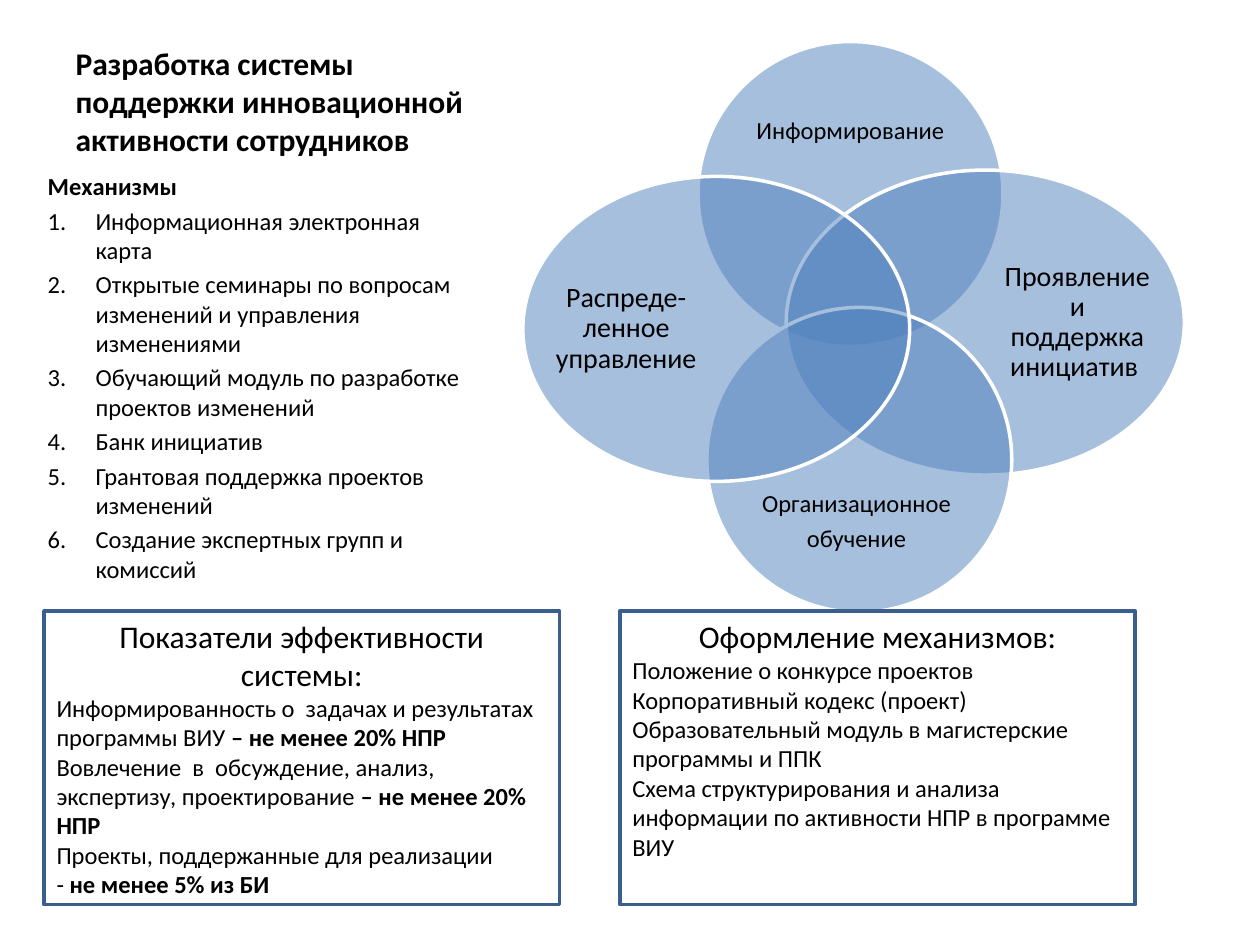
"""Builds a slide on supporting staff innovation: a four-oval Venn diagram, a list and two panels."""
import lxml.etree
import pptx
import pptx.dml.color
import pptx.enum.shapes
import pptx.enum.text
import pptx.oxml.ns
import pptx.util

COLOURS = {"text": "000000", "oval": "4F81BD", "white": "FFFFFF", "border": "3A5F8C"}
FONT = "Calibri"
Pt = pptx.util.Pt
qn = pptx.oxml.ns.qn
Shape = pptx.enum.shapes.MSO_SHAPE
Align = pptx.enum.text.PP_ALIGN
Anchor = pptx.enum.text.MSO_ANCHOR

deck = pptx.Presentation()
deck.slide_width = pptx.util.Inches(10)
deck.slide_height = pptx.util.Inches(7.5)
page = deck.slides.add_slide(deck.slide_layouts[5])


def share(left, top, width, height):
    """Turn percentages of the slide into a position and size."""
    across, down = deck.slide_width / 100, deck.slide_height / 100
    return [round(value) for value in (left * across, top * down, width * across, height * down)]


def write(frame, paragraphs, frame_format):
    """Fill a frame with (spans, size, paragraph format); a span is (words, bold)."""
    frame_format = {"word_wrap": True, "auto_size": pptx.enum.text.MSO_AUTO_SIZE.NONE, **frame_format}
    for name, value in frame_format.items():
        setattr(frame, name, value)
    for index, (spans, size, para_format) in enumerate(paragraphs):
        para = frame.add_paragraph() if index else frame.paragraphs[0]
        for name, value in para_format.items():
            setattr(para, name, value)
        for words, bold in spans:
            span = para.add_run()
            span.text = words
            for name, value in {"name": FONT, "size": Pt(size), "bold": bold}.items():
                setattr(span.font, name, value)
            span.font.color.rgb = pptx.dml.color.RGBColor.from_string(COLOURS["text"])


title = page.shapes.title
for name, value in zip(("left", "top", "width", "height"), share(5, 4, 32.9, 16.93)):
    setattr(title, name, value)
write(title.text_frame,
      [([("Разработка системы поддержки инновационной активности сотрудников", True)],
        18, {"alignment": Align.LEFT})],
      {"vertical_anchor": Anchor.TOP})

ovals = [
    ((55.4, 4.4, 24.2, 32.27), (58.2, 8.8, 18.6, 10.27), 14, ["Информирование"]),
    ((62.4, 18, 31.6, 32.27), (79.4, 21.73, 12.2, 24.8), 16, ["Проявление и поддержка инициатив "]),
    ((56.1, 32.53, 24.2, 32.27), (58.9, 50.13, 18.6, 10.27), 14, ["Организационное ", "обучение "]),
    ((41.5, 18.67, 30.7, 32.27), (43.8, 22.4, 11.8, 24.8), 16, ["Распреде-ленное управление"]),
]
for oval_place, label_place, size, lines in ovals:
    oval = page.shapes.add_shape(Shape.OVAL, *share(*oval_place))
    oval.shadow.inherit = False
    oval.fill.solid()
    oval.fill.fore_color.rgb = pptx.dml.color.RGBColor.from_string(COLOURS["oval"])
    colour = oval.fill._xPr.find(qn("a:solidFill"))[0]
    lxml.etree.SubElement(colour, qn("a:alpha"), val="50000")
    oval.line.color.rgb = pptx.dml.color.RGBColor.from_string(COLOURS["white"])
    oval.line.width = Pt(2)
    label = page.shapes.add_textbox(*share(*label_place))
    label_format = {"alignment": Align.CENTER, "line_spacing": 0.9, "space_after": Pt(size * 0.35)}
    write(label.text_frame,
          [([(line, False)], size, label_format) for line in lines],
          {"vertical_anchor": Anchor.MIDDLE, "margin_left": 0, "margin_right": 0,
           "margin_top": 0, "margin_bottom": 0})

mechanisms = [
    "Информационная электронная карта",
    "Открытые семинары по вопросам изменений и управления изменениями",
    "Обучающий модуль по разработке проектов изменений",
    "Банк инициатив",
    "Грантовая поддержка проектов изменений",
    "Создание экспертных групп и комиссий",
]
list_format = {"space_before": Pt(2.8)}
list_box = page.shapes.add_textbox(*share(2.8, 17.47, 35.1, 46.13))
write(list_box.text_frame,
      [([("Механизмы", True)], 14, list_format)]
      + [([(item, False)], 14, list_format) for item in mechanisms],
      {"vertical_anchor": Anchor.TOP})
indent = pptx.util.Inches(0.38)
for para in list_box.text_frame.paragraphs[1:]:
    properties = para._p.get_or_add_pPr()
    properties.set("marL", str(indent))
    properties.set("indent", str(-indent))
    lxml.etree.SubElement(properties, qn("a:buFont"), typeface="+mj-lt")
    lxml.etree.SubElement(properties, qn("a:buAutoNum"), type="arabicPeriod")

panels = [
    (3.5, Anchor.MIDDLE, "Показатели эффективности системы:", [
        [("Информированность о  задачах и результатах программы ВИУ ", False),
         ("– не менее 20% НПР", True)],
        [("Вовлечение  в  обсуждение, анализ,  экспертизу, проектирование ", False),
         ("– не менее 20% НПР", True)],
        [("Проекты, поддержанные для реализации", False)],
        [("- ", False), ("не менее 5% из БИ", True)],
    ]),
    (49.2, Anchor.TOP, "Оформление механизмов:", [
        [("Положение о конкурсе проектов", False)],
        [("Корпоративный кодекс (проект)", False)],
        [("Образовательный модуль в магистерские программы и ППК", False)],
        [("Схема структурирования и анализа информации по активности НПР в программе ВИУ", False)],
    ]),
]
for left, anchor, heading, entries in panels:
    panel = page.shapes.add_shape(Shape.RECTANGLE, *share(left, 64.67, 40.9, 31.07))
    panel.shadow.inherit = False
    panel.fill.solid()
    panel.fill.fore_color.rgb = pptx.dml.color.RGBColor.from_string(COLOURS["white"])
    panel.line.color.rgb = pptx.dml.color.RGBColor.from_string(COLOURS["border"])
    panel.line.width = Pt(2)
    write(panel.text_frame,
          [([(heading, False)], 18, {"alignment": Align.CENTER})]
          + [(spans, 14, {"alignment": Align.LEFT}) for spans in entries],
          {"vertical_anchor": anchor})

deck.save("out.pptx")
